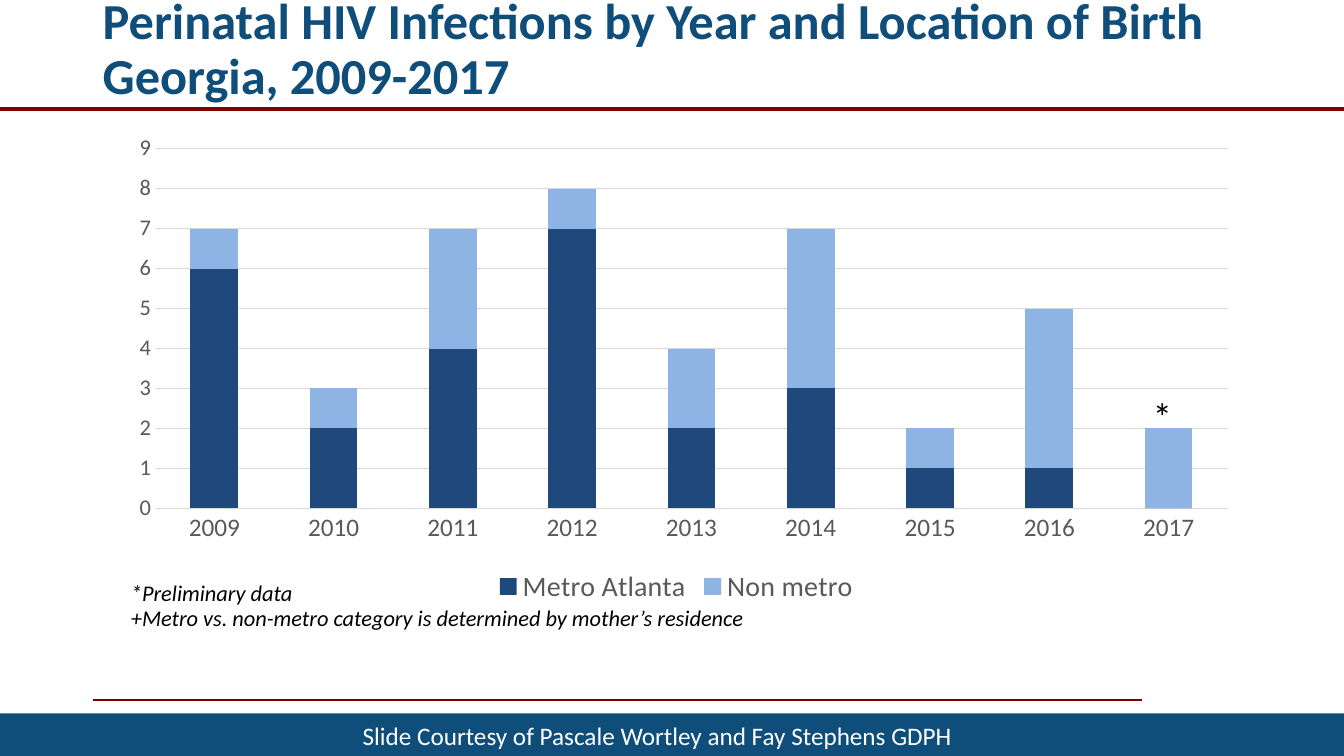
from collections import namedtuple

from lxml import etree
from pptx import Presentation
from pptx import util as u
from pptx.chart.data import CategoryChartData
from pptx.dml.color import RGBColor
from pptx.enum import chart as charts, shapes, text
from pptx.oxml import parse_xml
from pptx.oxml.ns import nsdecls, qn

Box = namedtuple("Box", "left top width height")  # centimetres

FONT = "Calibri"
NAVY, MAROON, BLACK, WHITE = "0F4D7B", "800000", "000000", "FFFFFF"
GREY, GRID = "595959", "D9D9D9"

YEARS = [str(year) for year in range(2009, 2018)]
INFECTIONS = [
    ("Metro Atlanta", "1F497D", (6, 2, 4, 7, 2, 3, 1, 1, 0)),
    ("Non metro", "8EB4E3", (1, 1, 3, 1, 2, 4, 1, 4, 2)),
]


def rgb(value):
    return RGBColor.from_string(value)


def style_font(font, size, color, bold=False, italic=False):
    font.name, font.size = FONT, u.Pt(size)
    font.bold, font.italic = bold, italic
    font.color.rgb = rgb(color)


def add_rule(slide, left, top, width, weight):
    rule = slide.shapes.add_connector(
        shapes.MSO_CONNECTOR.STRAIGHT,
        u.Cm(left), u.Cm(top), u.Cm(left + width), u.Cm(top))
    rule.line.color.rgb = rgb(MAROON)
    rule.line.width = u.Pt(weight)
    etree.SubElement(rule.line._get_or_add_ln().getparent(), qn("a:effectLst"))


def add_label(slide, box, words, size, color, wrap=True, **style):
    label = slide.shapes.add_textbox(*map(u.Cm, box))
    frame = label.text_frame
    frame.word_wrap = wrap
    frame.text = words
    for run in frame.paragraphs[0].runs:
        style_font(run.font, size, color, **style)
    return frame


def add_header(slide, box):
    # Title, centred on its box and overhanging the top edge
    title = add_label(
        slide, Box(box.left + 2.34, box.top - 0.56, 29.21, 3.68),
        "Perinatal HIV Infections by Year and Location of Birth\vGeorgia, 2009-2017",
        36, NAVY, bold=True)
    title.vertical_anchor = text.MSO_ANCHOR.MIDDLE
    title.paragraphs[0].line_spacing = 0.9
    # Rule along the bottom
    add_rule(slide, box.left, box.top + box.height, box.width, 3)


def add_infections_chart(slide, box):
    data = CategoryChartData()
    data.categories = YEARS
    for name, _, counts in INFECTIONS:
        data.add_series(name, counts)
    chart = slide.shapes.add_chart(
        charts.XL_CHART_TYPE.COLUMN_STACKED, *map(u.Cm, box), data).chart
    style_font(chart.font, 16, BLACK)
    chart.has_title = False

    # Stacked columns
    plot = chart.plots[0]
    plot.gap_width, plot.overlap = 150, 100
    plot.vary_by_categories = False
    for series, (_, color, _) in zip(plot.series, INFECTIONS):
        series.format.fill.solid()
        series.format.fill.fore_color.rgb = rgb(color)

    # Axes and gridlines
    years, counts = chart.category_axis, chart.value_axis
    for axis, size in ((years, 18), (counts, 16)):
        axis.major_tick_mark = axis.minor_tick_mark = charts.XL_TICK_MARK.NONE
        style_font(axis.tick_labels.font, size, GREY)
    counts.minimum_scale, counts.maximum_scale, counts.major_unit = 0, 9, 1
    counts.has_major_gridlines = True
    counts.format.line.fill.background()
    for line in (years.format.line, counts.major_gridlines.format.line):
        line.color.rgb = rgb(GRID)
        line.width = u.Pt(0.75)

    # Legend
    chart.has_legend = True
    chart.legend.position = charts.XL_LEGEND_POSITION.BOTTOM
    chart.legend.include_in_layout = False
    style_font(chart.legend.font, 20, GREY)

    # Inner plot area as fractions of the chart
    area = chart._chartSpace.chart.plotArea
    for layout in area.findall(qn("c:layout")):
        area.remove(layout)
    fractions = "".join(
        f'<c:{tag} val="{value}"/>' for tag, value in
        (("x", 0.053), ("y", 0.033), ("w", 0.92), ("h", 0.755)))
    area.insert(0, parse_xml(
        f'<c:layout {nsdecls("c")}><c:manualLayout><c:layoutTarget val="inner"/>'
        f'<c:xMode val="edge"/><c:yMode val="edge"/>{fractions}'
        '</c:manualLayout></c:layout>'))


def add_chart_region(slide, box):
    add_infections_chart(slide, box)
    # Footnotes and the marker above the last column
    notes_left = box.left + 0.71
    add_label(slide, Box(notes_left, box.top + 11.13, 9.35, 0.97),
              "*Preliminary data", 16, BLACK, italic=True)
    add_label(slide, Box(box.left + 26.46, box.top + 6.4, 1.22, 1.5),
              "*", 28, BLACK)
    add_label(slide, Box(notes_left, box.top + 11.74, 26.82, 0.99),
              "+Metro vs. non-metro category is determined by mother’s residence",
              16, BLACK, italic=True)


def add_footer(slide, box):
    add_rule(slide, box.left + 2.34, box.top - 0.33, 26.44, 1.5)
    # Band with the credit line
    band = slide.shapes.add_shape(shapes.MSO_SHAPE.RECTANGLE, *map(u.Cm, box))
    band.shadow.inherit = False
    band.fill.solid()
    band.fill.fore_color.rgb = rgb(NAVY)
    band.line.fill.background()
    add_label(slide, Box(box.left + 8.89, box.top + 0.05, 15.54, 1.02),
              "Slide Courtesy of Pascale Wortley and Fay Stephens GDPH",
              18, WHITE, wrap=False)


def main():
    deck = Presentation()
    width, height = 33.87, 19.05
    deck.slide_width, deck.slide_height = u.Cm(width), u.Cm(height)
    slide = deck.slides.add_slide(deck.slide_layouts[6])
    add_footer(slide, Box(0, height - 1.07, width, 1.07))
    add_header(slide, Box(0, 0, width, 2.74))
    add_chart_region(slide, Box(2.34, 3.35, 29.41, 12.01))
    deck.save("out.pptx")


if __name__ == "__main__":
    main()
